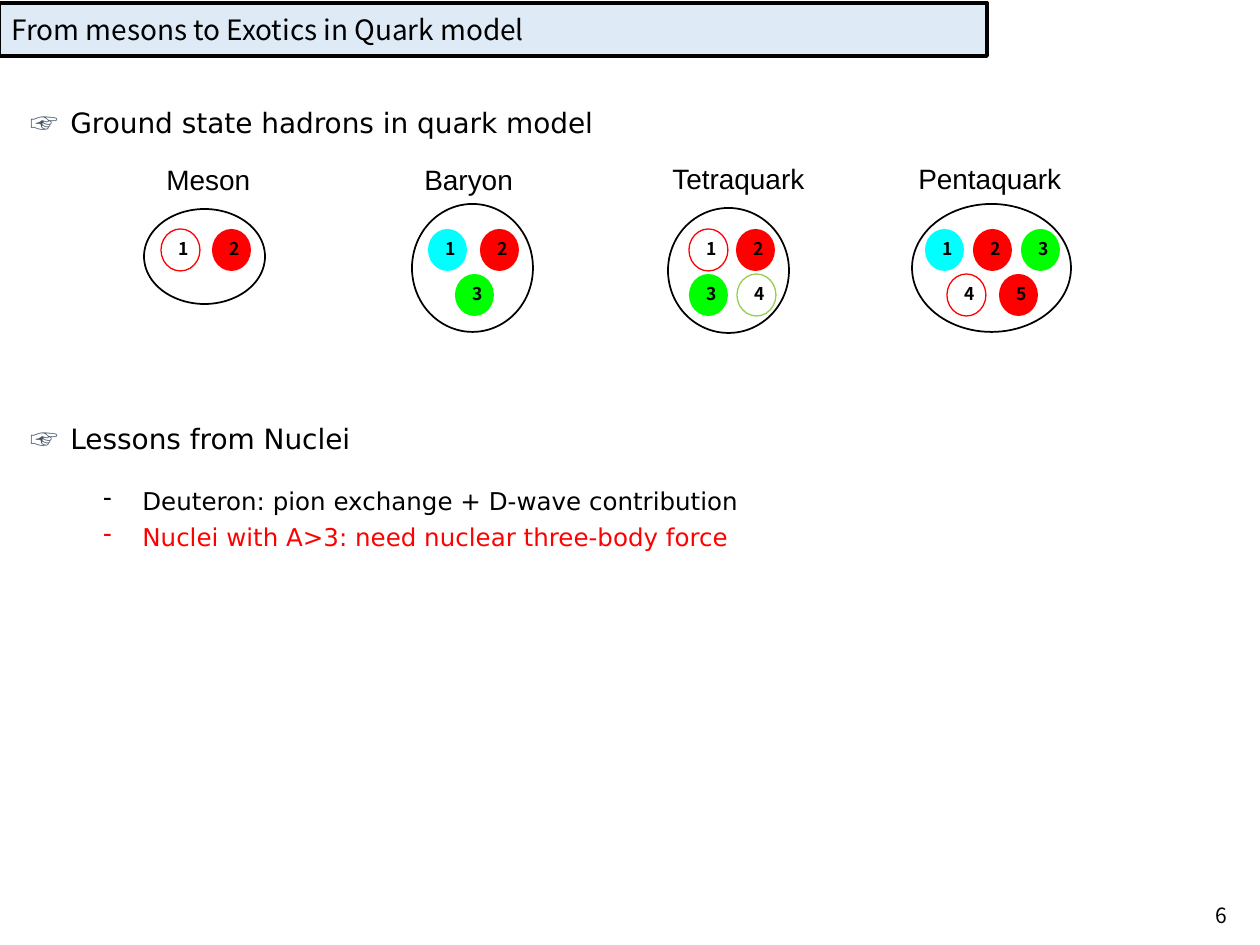
from dataclasses import dataclass
from itertools import count

from lxml import etree
from pptx import Presentation
from pptx import util as u
from pptx.dml.color import RGBColor
from pptx.enum import shapes, text
from pptx.oxml import ns

EMU_PER_PX = 914400 / 126


def px(length):
    return u.Emu(round(length * EMU_PER_PX))


@dataclass(frozen=True)
class Theme:
    black: str = "000000"
    white: str = "FFFFFF"
    band: str = "DEEBF7"
    pointer: str = "44546A"
    red: str = "FF0000"
    cyan: str = "00FFFF"
    green: str = "00FF00"
    leaf: str = "92D050"
    title_font: str = "Noto Sans CJK KR"
    body_font: str = "DejaVu Sans"
    label_font: str = "Arial"
    heading_size: int = 16
    item_size: int = 14
    page_size: int = 12
    quark_size: int = 10


THEME = Theme()

# Quark kind: fill and outline; the open circles are antiquarks.
QUARKS = {
    "cyan": (THEME.cyan, None),
    "red": (THEME.red, None),
    "green": (THEME.green, None),
    "anti-red": (THEME.white, THEME.red),
    "anti-green": (THEME.white, THEME.leaf),
}
QUARK_SIZE = (39, 42)
ROW_TOPS = (229, 274)

# Name, label box, outline, then rows of (quark kind, left).
HADRONS = [
    ("Meson", (154, 156, 111, 47), (144, 209, 121, 95),
     [[("anti-red", 161), ("red", 212)]]),
    ("Baryon", (412, 156, 160, 47), (412, 204, 121, 128),
     [[("cyan", 428), ("red", 480)], [("green", 455)]]),
    ("Tetraquark", (660, 155, 160, 47), (668, 208, 121, 125),
     [[("anti-red", 689), ("red", 736)], [("green", 689), ("anti-green", 737)]]),
    ("Pentaquark", (906, 155, 229, 47), (912, 204, 159, 128),
     [[("cyan", 925), ("red", 973), ("green", 1021)],
      [("anti-red", 947), ("red", 999)]]),
]


class SlideBuilder:
    def __init__(self, slide, theme):
        self.slide = slide
        self.theme = theme

    def style(self, span, font, size, color, bold=False):
        span.font.name = font
        span.font.size = u.Pt(size)
        span.font.bold = bold
        span.font.color.rgb = RGBColor.from_string(color)
        east_asian = etree.SubElement(span.font._element, ns.qn("a:ea"))
        east_asian.set("typeface", font)

    def hang(self, para, indent):
        """Give the paragraph a hanging indent, in px."""
        props = para._p.get_or_add_pPr()
        props.set("marL", str(px(indent)))
        props.set("indent", str(-px(indent)))
        return props

    def text_box(self, area):
        box = self.slide.shapes.add_textbox(*map(px, area))
        box.text_frame.word_wrap = True
        return box.text_frame

    def shape(self, preset, area, fill=None, line=None, width=1):
        shape = self.slide.shapes.add_shape(preset, *map(px, area))
        shape.shadow.inherit = False
        if fill:
            shape.fill.solid()
            shape.fill.fore_color.rgb = RGBColor.from_string(fill)
        else:
            shape.fill.background()
        if line:
            shape.line.color.rgb = RGBColor.from_string(line)
            shape.line.width = u.Pt(width)
        else:
            shape.line.fill.background()
        return shape

    def line_of_text(self, frame, wording, font, size, align, bold=False):
        frame.text = wording
        para = frame.paragraphs[0]
        para.alignment = align
        self.style(para.runs[0], font, size, self.theme.black, bold)
        return para

    def title(self, wording, area):
        band = self.shape(shapes.MSO_SHAPE.RECTANGLE, area, self.theme.band,
                          self.theme.black, 2.25)
        band.text_frame.vertical_anchor = text.MSO_ANCHOR.MIDDLE
        self.line_of_text(band.text_frame, wording, self.theme.title_font,
                          self.theme.heading_size, text.PP_ALIGN.LEFT)

    def page_number(self, wording, area):
        frame = self.text_box(area)
        frame.vertical_anchor = text.MSO_ANCHOR.MIDDLE
        self.line_of_text(frame, wording, self.theme.title_font,
                          self.theme.page_size, text.PP_ALIGN.RIGHT)

    def label(self, wording, area):
        self.line_of_text(self.text_box(area), wording, self.theme.label_font,
                          self.theme.heading_size, text.PP_ALIGN.LEFT)

    def heading(self, wording, top):
        """Place a heading after a pointing hand, aligned by a tab."""
        theme = self.theme
        para = self.text_box((18, top, 1168, 40)).paragraphs[0]
        para.line_spacing = 0.8
        self.hang(para, 40)
        pointer, span = para.add_run(), para.add_run()
        pointer.text, span.text = "☞\t", wording
        self.style(pointer, theme.title_font, theme.heading_size,
                   theme.pointer, bold=True)
        self.style(span, theme.body_font, theme.heading_size, theme.black)

    def dash_list(self, items, area):
        frame = self.text_box(area)
        frame.text = "\n".join(wording for wording, _ in items)
        for index, (para, (_, color)) in enumerate(zip(frame.paragraphs, items)):
            para.line_spacing = 0.8
            if index:
                para.space_before = u.Pt(self.theme.item_size / 2)
            bullet = etree.SubElement(self.hang(para, 39), ns.qn("a:buChar"))
            bullet.set("char", "-")
            self.style(para.runs[0], self.theme.body_font,
                       self.theme.item_size, color)

    def quark(self, number, kind, left, top):
        fill, line = QUARKS[kind]
        circle = self.shape(shapes.MSO_SHAPE.OVAL, (left, top, *QUARK_SIZE),
                            fill, line, 0.75)
        frame = circle.text_frame
        frame.word_wrap = False
        frame.vertical_anchor = text.MSO_ANCHOR.MIDDLE
        frame.margin_left = px(7)
        frame.margin_right = frame.margin_top = frame.margin_bottom = 0
        para = self.line_of_text(frame, str(number), self.theme.title_font,
                                 self.theme.quark_size, text.PP_ALIGN.CENTER,
                                 bold=True)
        para.line_spacing = 0.8

    def hadron(self, name, label_area, outline, rows):
        self.label(name, label_area)
        self.shape(shapes.MSO_SHAPE.OVAL, outline, line=self.theme.black)
        numbers = count(1)
        for top, row in zip(ROW_TOPS, rows):
            for kind, left in row:
                self.quark(next(numbers), kind, left, top)


def main():
    deck = Presentation()
    deck.slide_width, deck.slide_height = u.Inches(10), u.Inches(7.5)
    page = SlideBuilder(deck.slides.add_slide(deck.slide_layouts[6]), THEME)

    page.title("From mesons to Exotics in Quark model", (-1, 3, 988, 53))
    page.heading("Ground state hadrons in quark model", 106)
    for hadron in HADRONS:
        page.hadron(*hadron)
    page.heading("Lessons from Nuclei", 422)
    page.dash_list([
        ("Deuteron: pion exchange + D-wave contribution", THEME.black),
        ("Nuclei with A>3: need nuclear three-body force", THEME.red),
    ], (91, 486, 815, 76))
    page.page_number("6", (1182, 886, 58, 59))

    deck.save("out.pptx")


if __name__ == "__main__":
    main()
